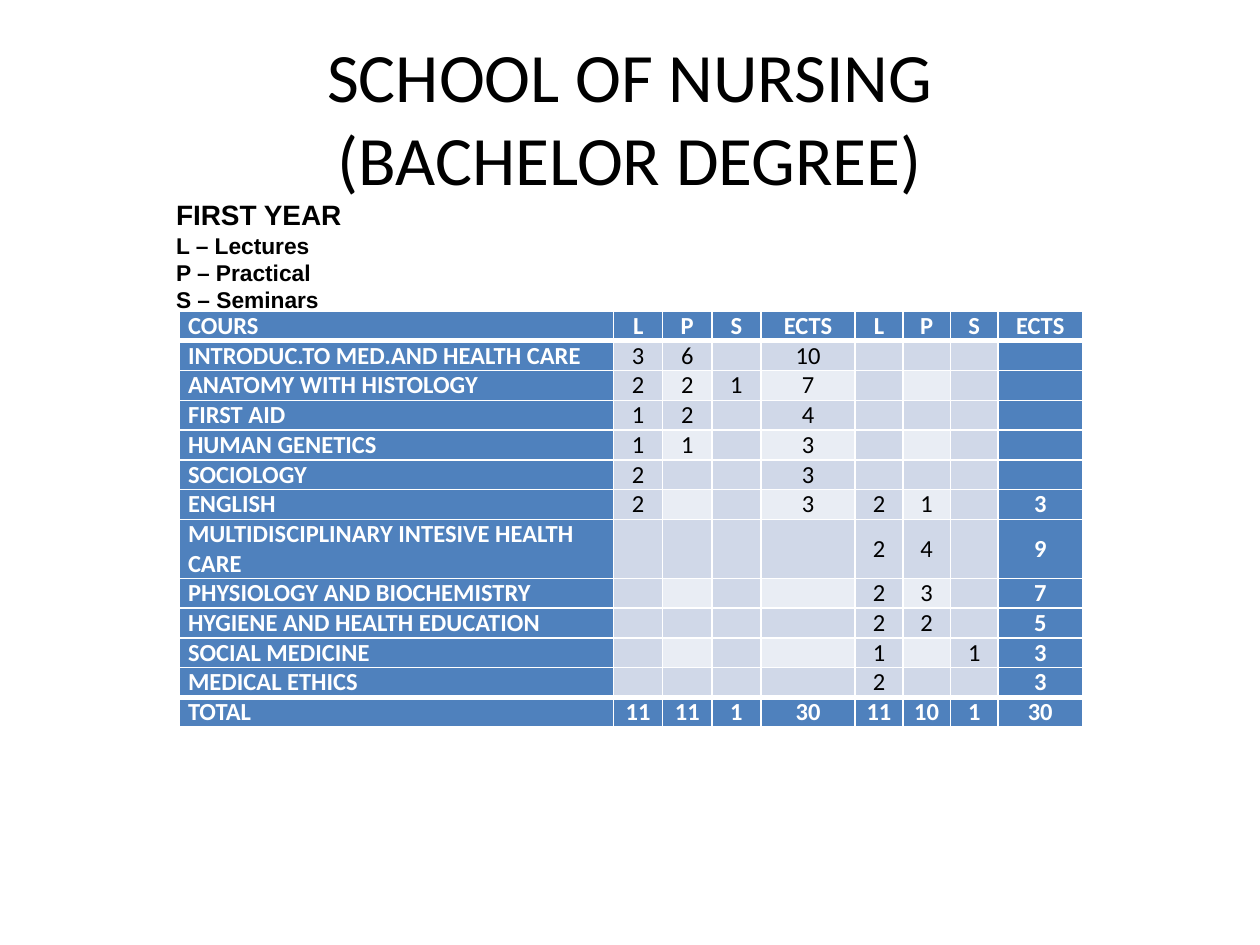
"""Build the first-year course plan slide of a school of nursing."""
from dataclasses import dataclass

from lxml.etree import SubElement
from pptx import Presentation
from pptx.dml.color import RGBColor
from pptx.enum.text import MSO_ANCHOR, PP_ALIGN
from pptx.oxml.ns import qn
from pptx.util import Cm, Pt

BLACK = RGBColor(0x00, 0x00, 0x00)
WHITE = RGBColor(0xFF, 0xFF, 0xFF)
BLUE = RGBColor(0x4F, 0x81, 0xBD)
BAND = RGBColor(0xD0, 0xD8, 0xE8)
PALE = RGBColor(0xE9, 0xED, 0xF4)

COLUMN_WIDTHS = (8.76, 0.99, 0.99, 0.99, 1.9, 0.96, 0.96, 0.96, 1.7)
ROW_HEIGHT = 0.6
CELL_FORMAT = {
    "margin_left": Cm(0.18),
    "margin_right": Cm(0.18),
    "margin_top": 0,
    "margin_bottom": 0,
    "vertical_anchor": MSO_ANCHOR.MIDDLE,
}


@dataclass(frozen=True)
class Line:
    text: str
    size: float
    font: str
    color: RGBColor = BLACK
    bold: bool = False
    align: PP_ALIGN = PP_ALIGN.LEFT


@dataclass(frozen=True)
class TextBox:
    left: float
    top: float
    width: float
    height: float
    lines: tuple[Line, ...]


@dataclass(frozen=True)
class Course:
    name: str
    winter: tuple = ("", "", "", "")
    summer: tuple = ("", "", "", "")

    def values(self) -> list[str]:
        return [self.name, *map(str, self.winter + self.summer)]


HEADINGS = ("L", "P", "S", "ECTS")
COURSES = (
    Course("COURS", HEADINGS, HEADINGS),
    Course("INTRODUC.TO MED.AND HEALTH CARE", (3, 6, "", 10)),
    Course("ANATOMY WITH HISTOLOGY", (2, 2, 1, 7)),
    Course("FIRST AID", (1, 2, "", 4)),
    Course("HUMAN GENETICS", (1, 1, "", 3)),
    Course("SOCIOLOGY", (2, "", "", 3)),
    Course("ENGLISH", (2, "", "", 3), (2, 1, "", 3)),
    Course("MULTIDISCIPLINARY INTESIVE HEALTH CARE", summer=(2, 4, "", 9)),
    Course("PHYSIOLOGY AND BIOCHEMISTRY", summer=(2, 3, "", 7)),
    Course("HYGIENE AND HEALTH EDUCATION", summer=(2, 2, "", 5)),
    Course("SOCIAL MEDICINE", summer=(1, "", 1, 3)),
    Course("MEDICAL ETHICS", summer=(2, "", "", 3)),
    Course("TOTAL", (11, 11, 1, 30), (11, 10, 1, 30)),
)

TITLE = TextBox(1.27, 0.76, 22.86, 3.18, (
    Line("SCHOOL OF NURSING\v(BACHELOR DEGREE)", 39.6, "Calibri",
         align=PP_ALIGN.CENTER),
))
LEGEND = TextBox(3.3, 4.52, 25.4, 1.27, (
    Line("FIRST YEAR", 16, "Arial", bold=True),
    *(Line(text, 13, "Arial", bold=True)
      for text in ("L – Lectures", "P – Practical", "S – Seminars")),
))


def write_line(p, line: Line) -> None:
    p.alignment = line.align
    if not line.text:
        SubElement(p._p, qn("a:endParaRPr"), sz=str(int(line.size * 100)))
        return
    p.text = line.text
    font_format = {"size": Pt(line.size), "name": line.font, "bold": line.bold}
    for r in p.runs:
        for name, value in font_format.items():
            setattr(r.font, name, value)
        r.font.color.rgb = line.color


def add_text_box(s, box: TextBox) -> None:
    sp = s.shapes.add_textbox(
        Cm(box.left), Cm(box.top), Cm(box.width), Cm(box.height))
    tf = sp.text_frame
    tf.word_wrap = True
    tf.vertical_anchor = MSO_ANCHOR.MIDDLE
    for i, line in enumerate(box.lines):
        write_line(tf.add_paragraph() if i else tf.paragraphs[0], line)


def set_borders(cell, top: int, bottom: int) -> None:
    tc_pr = cell._tc.get_or_add_tcPr()
    for side, width in {"L": 1, "R": 1, "T": top, "B": bottom}.items():
        ln = SubElement(tc_pr, qn(f"a:ln{side}"), w=str(Pt(width)))
        fill = SubElement(ln, qn("a:solidFill"))
        SubElement(fill, qn("a:srgbClr"), val=str(WHITE))


def add_course_table(s, courses: tuple[Course, ...]) -> None:
    last_row, last_col = len(courses) - 1, len(COLUMN_WIDTHS) - 1
    table = s.shapes.add_table(
        len(courses), len(COLUMN_WIDTHS), Cm(3.61), Cm(6.27),
        Cm(sum(COLUMN_WIDTHS)), Cm(ROW_HEIGHT * len(courses))).table
    table.first_row = table.horz_banding = False
    for column, width in zip(table.columns, COLUMN_WIDTHS):
        column.width = Cm(width)
    for i, course in enumerate(courses):
        table.rows[i].height = Cm(ROW_HEIGHT)
        for j, text in enumerate(course.values()):
            cell = table.cell(i, j)
            strong = i in (0, last_row) or j in (0, last_col)
            for name, value in CELL_FORMAT.items():
                setattr(cell, name, value)
            set_borders(cell, 3 if i in (1, last_row) else 1,
                        3 if i in (0, last_row - 1) else 1)
            cell.fill.solid()
            cell.fill.fore_color.rgb = (
                BLUE if strong else BAND if i % 2 or j % 2 else PALE)
            write_line(cell.text_frame.paragraphs[0], Line(
                text, 14, "Calibri", WHITE if strong else BLACK, strong,
                PP_ALIGN.CENTER if j else PP_ALIGN.LEFT))


def main() -> None:
    prs = Presentation()
    prs.slide_width, prs.slide_height = Cm(25.4), Cm(19.05)
    s = prs.slides.add_slide(prs.slide_layouts[6])
    add_text_box(s, TITLE)
    add_course_table(s, COURSES)
    add_text_box(s, LEGEND)
    prs.save("out.pptx")


if __name__ == "__main__":
    main()
